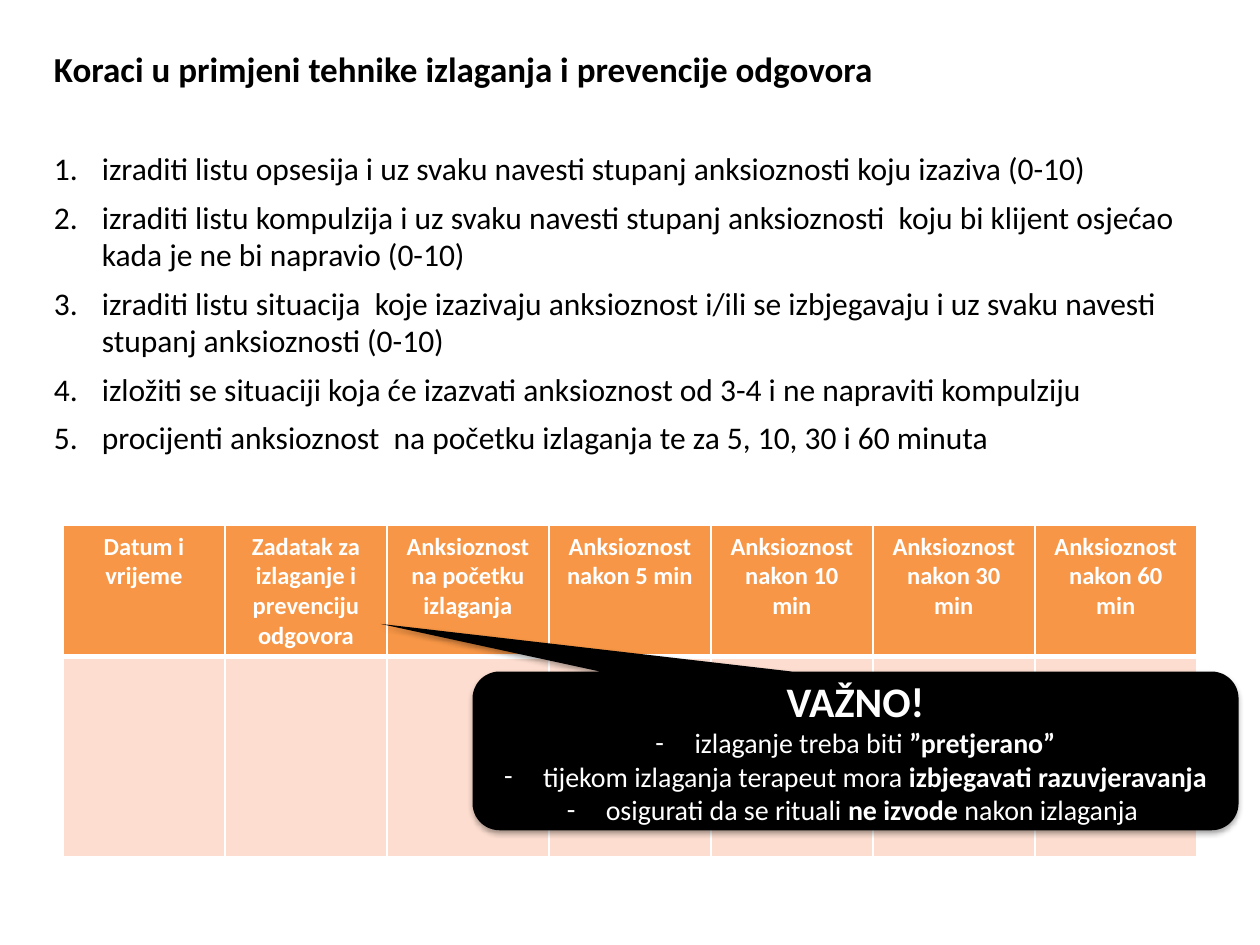
from dataclasses import dataclass

from lxml.etree import SubElement
from pptx import Presentation
from pptx.dml.color import RGBColor
from pptx.enum.shapes import MSO_SHAPE
from pptx.enum.text import MSO_ANCHOR, PP_ALIGN
from pptx.oxml import parse_xml
from pptx.oxml.ns import nsdecls, qn
from pptx.util import Inches, Pt


@dataclass(frozen=True)
class Theme:
    font: str = "Calibri"
    black: RGBColor = RGBColor(0, 0, 0)
    white: RGBColor = RGBColor(255, 255, 255)
    header: RGBColor = RGBColor(0xF9 - 2, 0x96, 0x46)
    body: RGBColor = RGBColor(0xFC, 0xDD, 0xCF)
    title_size: Pt = Pt(20)
    step_size: Pt = Pt(18)
    table_size: Pt = Pt(14)
    callout_title_size: Pt = Pt(24)
    callout_size: Pt = Pt(16)


theme = Theme()


def style_font(paragraph, size, color, bold=None):
    font = paragraph.font
    font.name = theme.font
    font.size = size
    font.color.rgb = color
    font.bold = bold


def add_bullet(paragraph, indent, tag, **attributes):
    properties = paragraph._p.get_or_add_pPr()
    properties.set("marL", str(indent))
    properties.set("indent", str(-indent))
    SubElement(properties, qn("a:buFont"), typeface=theme.font)
    SubElement(properties, qn(tag), **attributes)


presentation = Presentation()
presentation.slide_width = Inches(10)
presentation.slide_height = Inches(7.5)
slide = presentation.slides.add_slide(presentation.slide_layouts[6])

steps = [
    "izraditi listu opsesija i uz svaku navesti stupanj anksioznosti koju izaziva (0-10)",
    "izraditi listu kompulzija i uz svaku navesti stupanj anksioznosti  koju bi klijent osjećao kada je ne bi napravio (0-10)",
    "izraditi listu situacija  koje izazivaju anksioznost i/ili se izbjegavaju i uz svaku navesti stupanj anksioznosti (0-10)",
    "izložiti se situaciji koja će izazvati anksioznost od 3-4 i ne napraviti kompulziju",
    "procijenti anksioznost  na početku izlaganja te za 5, 10, 30 i 60 minuta",
]
text_box = slide.shapes.add_textbox(Inches(0.33), Inches(0.33), Inches(9.42), Inches(3.38))
text_frame = text_box.text_frame
text_frame.word_wrap = True
title = text_frame.paragraphs[0]
title.text = "Koraci u primjeni tehnike izlaganja i prevencije odgovora"
style_font(title, theme.title_size, theme.black, True)
for index, step in enumerate(steps):
    paragraph = text_frame.add_paragraph()
    paragraph.text = step
    add_bullet(paragraph, Inches(0.38), "a:buAutoNum", type="arabicPeriod")
    paragraph.space_before = Pt(6) if index else Pt(34)
    style_font(paragraph, theme.step_size, theme.black)

headers = [
    "Datum i vrijeme",
    "Zadatak za izlaganje i prevenciju odgovora",
    "Anksioznost na početku izlaganja",
] + [f"Anksioznost nakon {minutes} min" for minutes in (5, 10, 30, 60)]
table = slide.shapes.add_table(
    2, len(headers), Inches(0.5), Inches(4.17), Inches(9), Inches(2.63)
).table
table.rows[0].height = Inches(1.04)
table.rows[1].height = Inches(1.59)
row_styles = [
    (theme.header, {"L": 1, "R": 1, "T": 1, "B": 3}),
    (theme.body, {"L": 1, "R": 1, "T": 3, "B": 1}),
]
for row, (fill_color, borders) in zip(table.rows, row_styles):
    for cell in row.cells:
        properties = cell._tc.get_or_add_tcPr()
        for side, width in borders.items():
            properties.append(parse_xml(
                f'<a:ln{side} {nsdecls("a")} w="{Pt(width)}"><a:solidFill>'
                f'<a:srgbClr val="{theme.white}"/></a:solidFill></a:ln{side}>'
            ))
        cell.fill.solid()
        cell.fill.fore_color.rgb = fill_color
for cell, header in zip(table.rows[0].cells, headers):
    cell.text = header
    paragraph = cell.text_frame.paragraphs[0]
    paragraph.alignment = PP_ALIGN.CENTER
    style_font(paragraph, theme.table_size, theme.white, True)

callout = slide.shapes.add_shape(
    MSO_SHAPE.ROUNDED_RECTANGULAR_CALLOUT,
    Inches(3.75), Inches(5.33), Inches(6.08), Inches(1.26),
)
for index, adjustment in enumerate((-0.62, -0.8, 0.17)):
    callout.adjustments[index] = adjustment
callout.fill.solid()
callout.fill.fore_color.rgb = theme.black
callout.line.fill.background()
callout.shadow.inherit = False
effects = callout._element.spPr.find(qn("a:effectLst"))
effects.append(parse_xml(
    f'<a:outerShdw {nsdecls("a")} blurRad="{Pt(3.1)}" dist="{Pt(1.8)}" dir="5400000" rotWithShape="0">'
    f'<a:srgbClr val="{theme.black}"><a:alpha val="35000"/></a:srgbClr></a:outerShdw>'
))

warnings = [
    [("izlaganje treba biti ", False), ("”pretjerano”", True)],
    [("tijekom izlaganja terapeut mora ", False), ("izbjegavati razuvjeravanja", True)],
    [("osigurati da se rituali ", False), ("ne izvode ", True), ("nakon izlaganja ", False)],
]
text_frame = callout.text_frame
text_frame.word_wrap = True
text_frame.vertical_anchor = MSO_ANCHOR.MIDDLE
heading = text_frame.paragraphs[0]
heading.text = "VAŽNO!"
heading.alignment = PP_ALIGN.CENTER
style_font(heading, theme.callout_title_size, theme.white, True)
for warning in warnings:
    paragraph = text_frame.add_paragraph()
    paragraph.alignment = PP_ALIGN.CENTER
    add_bullet(paragraph, Inches(0.31), "a:buChar", char="-")
    style_font(paragraph, theme.callout_size, theme.white)
    for text, bold in warning:
        run = paragraph.add_run()
        run.text = text
        run.font.bold = bold

presentation.save("out.pptx")
